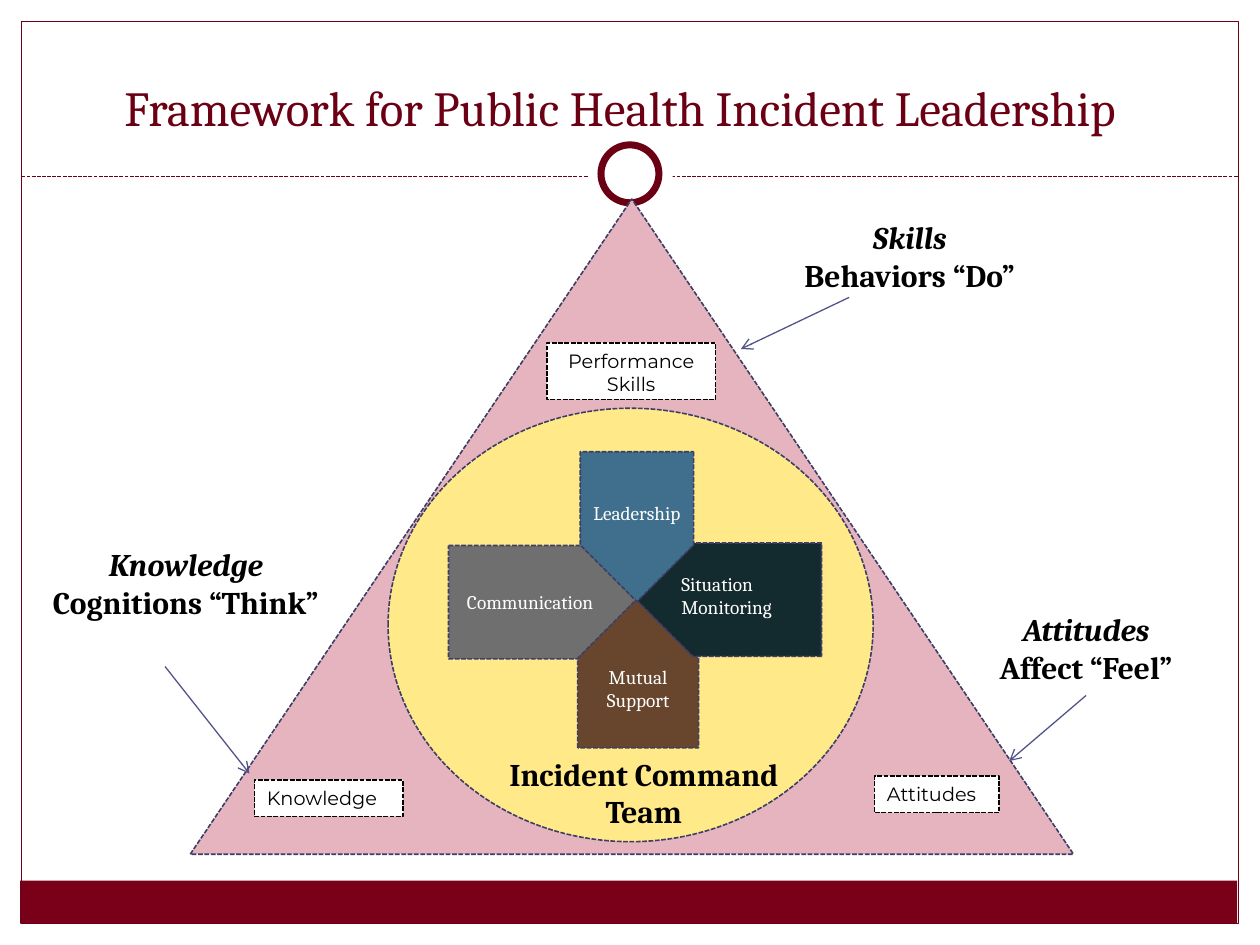
from lxml import etree
from pptx import Presentation
from pptx.dml.color import RGBColor
from pptx.enum.dml import MSO_LINE
from pptx.enum.shapes import MSO_CONNECTOR, MSO_SHAPE
from pptx.enum.text import MSO_ANCHOR, PP_ALIGN
from pptx.oxml.ns import qn
from pptx.util import Inches, Pt

RECT, OVAL = MSO_SHAPE.RECTANGLE, MSO_SHAPE.OVAL
TRIANGLE, PLATE = MSO_SHAPE.ISOSCELES_TRIANGLE, MSO_SHAPE.PENTAGON
STRAIGHT = MSO_CONNECTOR.STRAIGHT
DASH = MSO_LINE.SQUARE_DOT
LEFT, CENTER = PP_ALIGN.LEFT, PP_ALIGN.CENTER
TOP, MIDDLE, BOTTOM = MSO_ANCHOR.TOP, MSO_ANCHOR.MIDDLE, MSO_ANCHOR.BOTTOM
SERIF, SANS = "Cambria", "Montserrat"
COLORS = {
    "white": "FFFFFF", "black": "000000", "maroon": "6B0015", "band": "790018",
    "pink": "E6B4BE", "yellow": "FFE989", "edge": "3D3E66", "arrow": "53548A",
    "gray": "6F6F6F", "brown": "68462E", "dark": "132A2F", "blue": "406F8D",
}


def rgb(name):
    """Return the named colour."""
    return RGBColor.from_string(COLORS[name])


def style_line(line, color, width, dash=None):
    """Set colour, width and dash of a line."""
    line.color.rgb = rgb(color)
    line.width = Pt(width)
    if dash is not None:
        line.dash_style = dash


def write(frame, lines, size, color="black", font=SERIF, align=CENTER,
          anchor=TOP, bold=None, italic_first=False):
    """Write one paragraph per line into a text frame."""
    frame.word_wrap = True
    frame.vertical_anchor = anchor
    for i, words in enumerate(lines):
        paragraph = frame.add_paragraph() if i else frame.paragraphs[0]
        paragraph.alignment = align
        run = paragraph.add_run()
        run.text = words
        run.font.name, run.font.size = font, Pt(size)
        run.font.bold = bold
        run.font.italic = True if italic_first and i == 0 else None
        run.font.color.rgb = rgb(color)


def add_figure(slide, kind, box, fill=None, edge=None, width=0.9, dash=DASH):
    """Add a preset shape with an optional fill and outline."""
    figure = slide.shapes.add_shape(kind, *map(Inches, box))
    figure.shadow.inherit = False
    if fill:
        figure.fill.solid()
        figure.fill.fore_color.rgb = rgb(fill)
    else:
        figure.fill.background()
    if edge:
        style_line(figure.line, edge, width, dash)
    else:
        figure.line.fill.background()
    return figure


def add_line(slide, start, end, color, dash=None, arrow=False):
    """Add a straight line, with an arrowhead at its end if asked."""
    line = slide.shapes.add_connector(STRAIGHT, *map(Inches, start + end))
    style_line(line.line, color, 0.75, dash)
    if arrow:
        etree.SubElement(line.line._get_or_add_ln(), qn("a:tailEnd"), type="arrow")
    etree.SubElement(line._element.spPr, qn("a:effectLst"))


def add_text(slide, box, lines, size, **style):
    """Add a text box."""
    write(slide.shapes.add_textbox(*map(Inches, box)).text_frame, lines, size, **style)


def add_petal(slide, box, fill, rotation=0, label=None, direction=None):
    """Add one arm of the cross, its label kept upright."""
    petal = add_figure(slide, PLATE, box, fill, "edge")
    petal.rotation = rotation
    if label:
        write(petal.text_frame, [label], 11, "white", anchor=MIDDLE)
    if direction:
        petal.text_frame._txBody.bodyPr.set("vert", direction)


def add_tag(slide, box, label, align=LEFT):
    """Add a white dashed tag inside the triangle."""
    tag = add_figure(slide, RECT, box, "white", "black")
    write(tag.text_frame, [label], 11, font=SANS, align=align)


def add_frame(slide):
    """Draw the border, bottom band, divider and ring."""
    add_figure(slide, RECT, (0.16, 6.99, 9.66, 0.34), "band")
    add_figure(slide, RECT, (0.17, 0.17, 9.66, 7.16), None, "maroon", 0.75, None)
    add_line(slide, (0.17, 1.4), (9.83, 1.4), "maroon", DASH)
    add_figure(slide, OVAL, (4.67, 1.05, 0.67, 0.67), "white")
    add_figure(slide, OVAL, (4.77, 1.15, 0.46, 0.46), "white", "maroon", 4, None)


def add_title(slide, words):
    """Place and fill the title placeholder."""
    title = slide.shapes.title
    title.left, title.top, title.width, title.height = map(Inches, (0.17, 0.28, 9.5, 0.85))
    write(title.text_frame, [words], 28, "maroon", anchor=BOTTOM)


def main():
    """Build the leadership framework slide."""
    deck = Presentation()
    deck.slide_width, deck.slide_height = Inches(10), Inches(7.5)
    slide = deck.slides.add_slide(deck.slide_layouts[5])
    add_frame(slide)
    add_title(slide, "Framework for Public Health Incident Leadership")

    add_figure(slide, TRIANGLE, (1.51, 1.58, 7.01, 5.2), "pink", "edge")
    add_figure(slide, OVAL, (3.08, 3.24, 3.85, 3.44), "yellow", "edge")

    add_petal(slide, (3.56, 4.33, 1.52, 0.9), "gray", 0, "Communication")
    add_petal(slide, (4.47, 4.86, 1.19, 0.96), "brown", 270, "Mutual Support", "vert")
    add_petal(slide, (5.05, 4.31, 1.47, 0.9), "dark", 180)
    add_text(slide, (5.31, 4.49, 1.26, 0.51), ["Situation Monitoring"], 11,
             color="white", align=LEFT)
    add_petal(slide, (4.46, 3.73, 1.19, 0.9), "blue", 90, "Leadership", "vert270")
    add_text(slide, (3.87, 5.94, 2.48, 0.71), ["Incident Command Team"], 18, bold=True)

    domains = [
        ((7.45, 4.79, 2.34, 0.71), "Attitudes", "Affect “Feel”", (8.62, 5.52), (8.01, 6.04)),
        ((0.23, 4.28, 2.49, 1.01), "Knowledge", "Cognitions “Think”", (1.31, 5.29), (1.98, 6.14)),
        ((6.26, 1.68, 1.92, 1.01), "Skills", "Behaviors “Do”", (6.74, 2.36), (5.88, 2.77)),
    ]
    for box, domain, meaning, start, end in domains:
        add_text(slide, box, [domain, meaning], 18, bold=True, italic_first=True)
        add_line(slide, start, end, "arrow", arrow=True)

    add_tag(slide, (6.94, 6.16, 0.99, 0.29), "Attitudes")
    add_tag(slide, (2.02, 6.19, 1.18, 0.29), "Knowledge")
    add_tag(slide, (4.34, 2.72, 1.34, 0.45), "Performance Skills", CENTER)
    deck.save("out.pptx")


if __name__ == "__main__":
    main()
